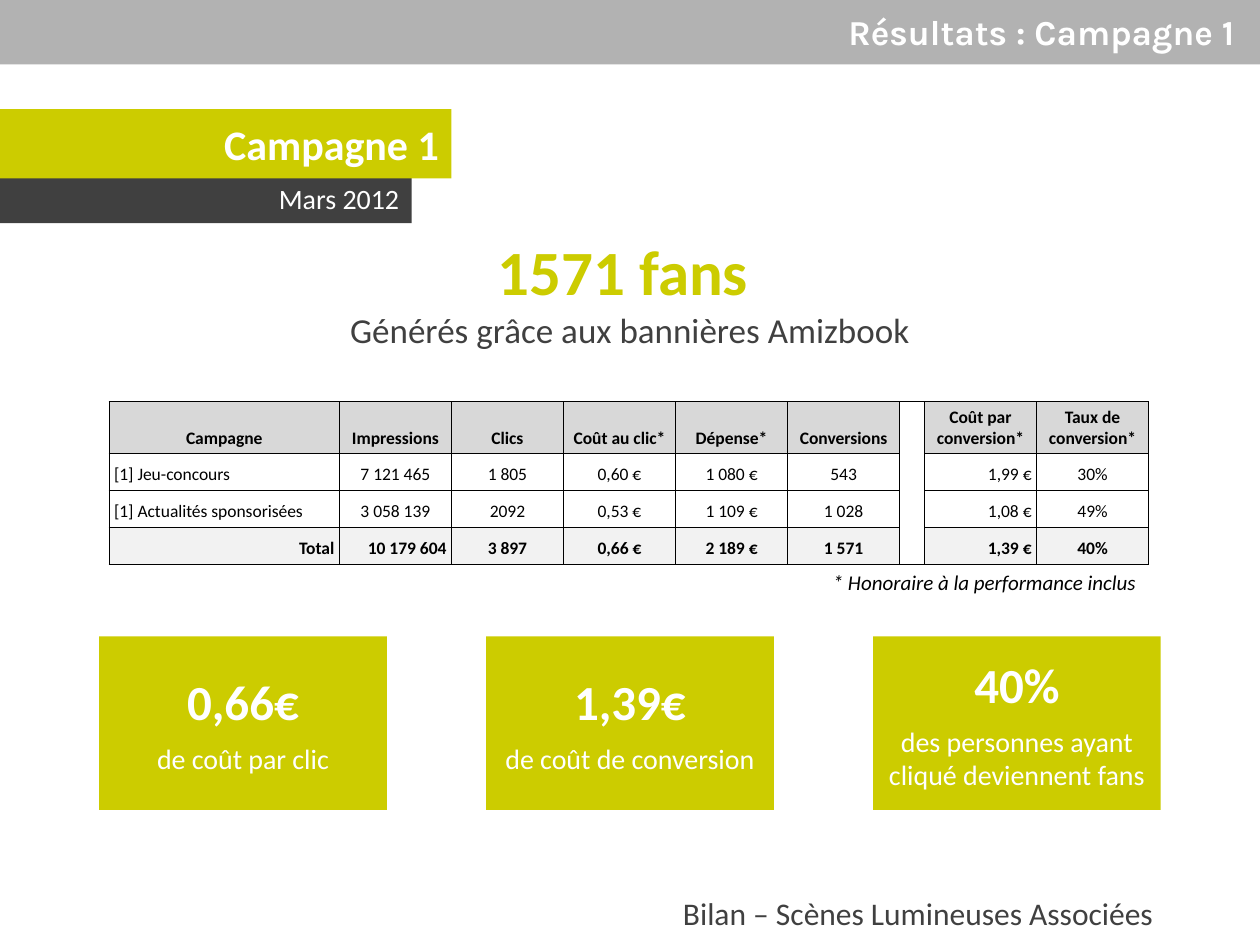
import pptx
import pptx.util
import pptx.dml.color
import pptx.enum.shapes
import pptx.enum.text
import pptx.oxml
import pptx.oxml.ns

Cm, Pt = pptx.util.Cm, pptx.util.Pt
ALIGN = dict(zip("lcr", (
    pptx.enum.text.PP_ALIGN.LEFT,
    pptx.enum.text.PP_ALIGN.CENTER,
    pptx.enum.text.PP_ALIGN.RIGHT)))
ANCHOR = pptx.enum.text.MSO_ANCHOR

COLORS = {
    "lime": "CCCC00", "dark": "404040", "bar": "B2B2B2", "white": "FFFFFF",
    "black": "000000", "head": "D8D8D8", "total": "F2F2F2",
}
HEADS = ["Campagne", "Impressions", "Clics", "Coût au clic*", "Dépense*",
         "Conversions", "", "Coût par conversion*", "Taux de conversion*"]
ROWS = [
    ["[1] Jeu-concours", "7 121 465", "1 805", "0,60 €", "1 080 €",
     "543", "", "1,99 €", "30%"],
    ["[1] Actualités sponsorisées", "3 058 139", "2092", "0,53 €",
     "1 109 €", "1 028", "", "1,08 €", "49%"],
    ["Total", "10 179 604", "3 897", "0,66 €", "2 189 €",
     "1 571", "", "1,39 €", "40%"],
]
GAP, COST = 6, 7  # empty column, and the right-aligned cost column
FACTS = [
    ("0,66€", "de coût par clic"),
    ("1,39€", "de coût de conversion"),
    ("40%", "des personnes ayant cliqué deviennent fans"),
]


def rgb(name):
    return pptx.dml.color.RGBColor.from_string(COLORS[name])


class Deck:
    def __init__(self, font="Calibri"):
        self.font = font
        self.prs = pptx.Presentation()
        self.prs.slide_width, self.prs.slide_height = Cm(25.4), Cm(19.05)
        self.slide = self.prs.slides.add_slide(self.prs.slide_layouts[5])
        self.shapes = self.slide.shapes

    def put(self, frame, lines, align="l", after=0):
        """Fill a text frame; each line is (text, size, color, style, font)."""
        for i, (text, size, color, style, *font) in enumerate(lines):
            par = frame.add_paragraph() if i else frame.paragraphs[0]
            par.alignment = ALIGN[align]
            par.space_after = Pt(after)
            run = par.add_run()
            run.text = text
            run.font.name = font[0] if font else self.font
            run.font.size = Pt(size)
            run.font.bold = "b" in style
            run.font.italic = "i" in style
            run.font.color.rgb = rgb(color)

    def title(self, text, box):
        shape = self.shapes.title
        shape.left, shape.top, shape.width, shape.height = map(Cm, box)
        frame = shape.text_frame
        frame.vertical_anchor = ANCHOR.MIDDLE
        frame.margin_right = Cm(0.51)
        self.put(frame, [(text, 20, "white", "b", "Karla")], "r")

    def block(self, box, color, lines=(), align="r", after=0, inset=None):
        shape = self.shapes.add_shape(
            pptx.enum.shapes.MSO_SHAPE.RECTANGLE, *map(Cm, box))
        shape.shadow.inherit = False
        shape.fill.solid()
        shape.fill.fore_color.rgb = rgb(color)
        shape.line.fill.background()
        frame = shape.text_frame
        frame.word_wrap = True
        frame.vertical_anchor = ANCHOR.MIDDLE
        if inset:
            frame.margin_left = frame.margin_right = Cm(inset)
            frame.margin_top = frame.margin_bottom = Cm(inset)
        self.put(frame, lines, align, after)
        return shape

    def band(self, box, color):
        """Put a plain block behind everything else."""
        shape = self.block(box, color)
        self.shapes._spTree.insert(2, shape._element)

    def text(self, box, lines, align="l", anchor=ANCHOR.TOP, wrap=True):
        frame = self.shapes.add_textbox(*map(Cm, box)).text_frame
        frame.word_wrap = wrap
        frame.vertical_anchor = anchor
        self.put(frame, lines, align)

    def border(self, cell, sides):
        """Draw thin lines on the given sides and none on the others."""
        props = cell._tc.get_or_add_tcPr()
        space = pptx.oxml.ns.nsdecls("a")
        for side in "LRTB":
            fill = (f'<a:solidFill><a:srgbClr val="{COLORS["black"]}"/>'
                    '</a:solidFill>' if side in sides else "<a:noFill/>")
            props.append(pptx.oxml.parse_xml(
                f'<a:ln{side} {space} w="{Pt(0.5)}">{fill}</a:ln{side}>'))

    def cell(self, cell, text, align, bold, fill, sides="LRTB"):
        self.border(cell, sides)
        if fill:
            cell.fill.solid()
            cell.fill.fore_color.rgb = rgb(fill)
        else:
            cell.fill.background()
        cell.vertical_anchor = ANCHOR.BOTTOM
        cell.margin_left = cell.margin_right = Cm(0.1)
        cell.margin_top = cell.margin_bottom = Cm(0.1)
        if text:
            self.put(cell.text_frame,
                     [(text, 10, "black", "b" if bold else "")], align)
        else:
            cell.text_frame.paragraphs[0].font.size = Pt(10)

    def table(self, box, rows, widths, heights):
        grid = self.shapes.add_table(
            len(rows), len(widths), *map(Cm, box)).table
        grid.first_row = grid.horz_banding = False
        for col, width in zip(grid.columns, widths):
            col.width = Cm(width)
        last = len(rows) - 1
        for r, row in enumerate(rows):
            grid.rows[r].height = Cm(heights[r])
            fill = {0: "head", last: "total"}.get(r)
            for c, text in enumerate(row):
                cell = grid.cell(r, c)
                if c == GAP:
                    sides = "LR" + {0: "T", last: "B"}.get(r, "")
                    self.cell(cell, "", "c", False, "white", sides)
                    continue
                align = "c"
                if r and c == 0:
                    align = "r" if r == last else "l"
                elif (r and c == COST) or (r == last and c == 1):
                    align = "r"
                self.cell(cell, text, align, r in (0, last), fill)


def main():
    deck = Deck()
    deck.band((0, 0, 25.4, 1.3), "bar")
    deck.title("Résultats : Campagne 1", (0, 0, 25.4, 1.27))
    deck.block((0, 3.5, 8.3, 1), "dark", [("Mars 2012", 16, "white", "")])
    deck.block((0, 2.2, 9.1, 1.4), "lime", [("Campagne 1", 24, "white", "b")])
    deck.text((2.6, 4.57, 20.2, 2.8), [
        ("1571 fans ", 36, "lime", "b"),
        ("Générés grâce aux bannières Amizbook", 20, "dark", "")], "c")
    deck.table((2.2, 8.1, 21, 3.25), [HEADS] + ROWS,
               [4.64] + [2.26] * 5 + [0.5] + [2.26] * 2,
               [1.04] + [0.74] * 3)
    deck.text((16.54, 11.35, 6.68, 0.77), [
        ("* Honoraire à la performance inclus", 12, "black", "i")], wrap=False)
    for i, (value, label) in enumerate(FACTS):
        deck.block((2 + 7.8 * i, 12.83, 5.8, 3.5), "lime", [
            (value, 28, "white", "b"), (label, 16, "white", "")],
            "c", after=6, inset=0.2)
    deck.text((8.7, 17.75, 14.8, 1.3), [
        ("Bilan – Scènes Lumineuses Associées", 18, "dark", "")],
        "r", ANCHOR.MIDDLE)
    deck.prs.save("out.pptx")


if __name__ == "__main__":
    main()
